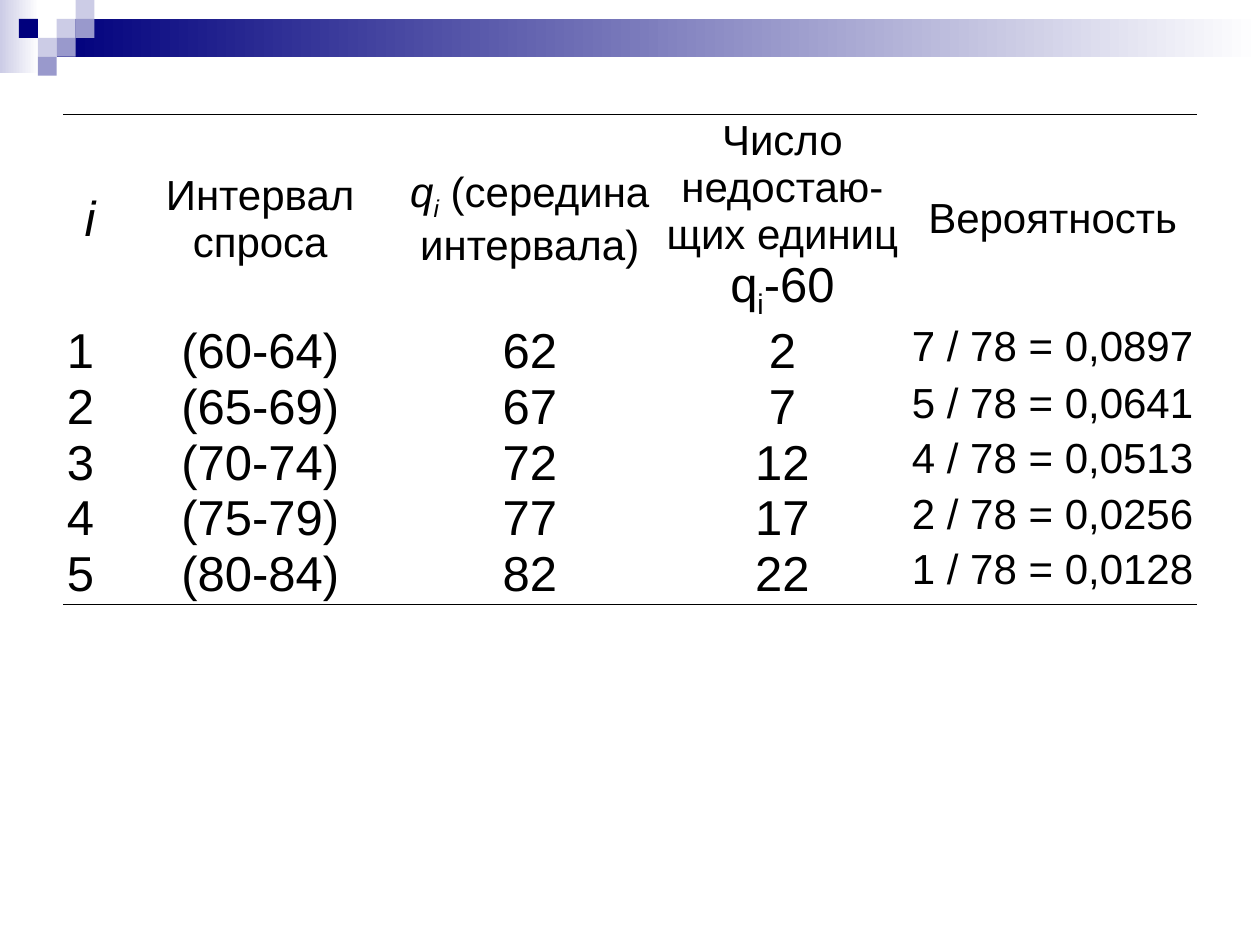
import lxml.etree
import pptx
import pptx.dml.color
import pptx.enum.shapes
import pptx.enum.text
import pptx.oxml.ns
import pptx.util

PX = 9144
COLORS = {
    "text": "000000",
    "navy": "00007D",
    "violet": "9999CC",
    "lilac": "CCCCE6",
    "white": "FFFFFF",
}
FONT = "Arial"
LARGE, SMALL = 28, 24
PLAIN_STYLE = "{2D5ABB26-0587-4C30-8999-92F81FD0307C}"
COLUMN_WIDTHS = [43, 227, 201, 200, 229]
COLUMN_MARGINS = [3, 3, 3, 3, 2]
ROW_HEIGHTS = [166, 45, 44, 44, 44, 46]

HEADERS = [
    [("i", LARGE, "italic")],
    [("Интервал спроса", SMALL, "")],
    [("q", SMALL, "italic"), ("i", SMALL, "italic sub"),
     (" (середина интервала)", SMALL, "")],
    [("Число недостаю-щих единиц ", SMALL, ""), ("q", LARGE, ""),
     ("i", LARGE, "sub"), ("-60", LARGE, "")],
    [("Вероятность", SMALL, "")],
]
DEMAND = [
    ("1", "(60-64)", "62", "2", "7 / 78 = 0,0897"),
    ("2", "(65-69)", "67", "7", "5 / 78 = 0,0641"),
    ("3", "(70-74)", "72", "12", "4 / 78 = 0,0513"),
    ("4", "(75-79)", "77", "17", "2 / 78 = 0,0256"),
    ("5", "(80-84)", "82", "22", "1 / 78 = 0,0128"),
]


def color(name):
    return pptx.dml.color.RGBColor.from_string(COLORS[name])


def add_block(page, box, *names):
    block = page.shapes.add_shape(
        pptx.enum.shapes.MSO_SHAPE.RECTANGLE, *(length * PX for length in box))
    block.shadow.inherit = False
    block.line.fill.background()
    if len(names) == 1:
        block.fill.solid()
        block.fill.fore_color.rgb = color(names[0])
        return
    block.fill.gradient()
    block.fill.gradient_angle = 0
    for stop, name, position in zip(block.fill.gradient_stops, names, (0, 1)):
        stop.color.rgb = color(name)
        stop.position = position


def add_banner(page, box):
    left, top, width, height = box
    step = height // 4
    add_block(page, (left, top, 31, 58), "lilac", "white")
    add_block(page, (left + 3 * step, top + step, width - 3 * step, 2 * step),
              "navy", "white")
    squares = [(3, 1, "lilac"), (4, 0, "lilac"), (4, 1, "violet"),
               (2, 2, "lilac"), (1, 1, "navy"), (3, 2, "violet"),
               (2, 3, "violet")]
    for column, row, name in squares:
        add_block(page, (left + column * step, top + row * step, step, step), name)


def add_border(cell, side):
    properties = cell._tc.get_or_add_tcPr()
    line = lxml.etree.Element(pptx.oxml.ns.qn("a:" + side), w=str(pptx.util.Pt(1)))
    fill = lxml.etree.SubElement(line, pptx.oxml.ns.qn("a:solidFill"))
    lxml.etree.SubElement(fill, pptx.oxml.ns.qn("a:srgbClr"), val=COLORS["text"])
    properties.insert(0, line)


def fill_cell(cell, runs, margin, alignment, anchor):
    cell.margin_left = cell.margin_right = margin * PX
    cell.margin_top = cell.margin_bottom = 0
    cell.vertical_anchor = anchor
    cell.fill.background()
    para = cell.text_frame.paragraphs[0]
    para.alignment = alignment
    for text, size, style in runs:
        span = para.add_run()
        span.text = text
        span.font.name = FONT
        span.font.size = pptx.util.Pt(size)
        span.font.color.rgb = color("text")
        span.font.italic = "italic" in style
        if "sub" in style:
            span.font._element.set("baseline", "-25000")


def add_demand_table(page, box):
    rows = [HEADERS]
    for values in DEMAND:
        sizes = [LARGE] * (len(values) - 1) + [SMALL]
        rows.append([[(value, size, "")] for value, size in zip(values, sizes)])
    table = page.shapes.add_table(
        len(rows), len(HEADERS), *(length * PX for length in box)).table
    table.first_row = table.horz_banding = False
    table._tbl.tblPr.find(pptx.oxml.ns.qn("a:tableStyleId")).text = PLAIN_STYLE
    for column, width in zip(table.columns, COLUMN_WIDTHS):
        column.width = width * PX
    for row, height in zip(table.rows, ROW_HEIGHTS):
        row.height = height * PX

    align = pptx.enum.text.PP_ALIGN
    anchors = pptx.enum.text.MSO_ANCHOR
    for row_index, row in enumerate(rows):
        is_header = row_index == 0
        for column_index, runs in enumerate(row):
            cell = table.cell(row_index, column_index)
            is_number = column_index == 0 and not is_header
            fill_cell(cell, runs, COLUMN_MARGINS[column_index],
                      align.LEFT if is_number else align.CENTER,
                      anchors.MIDDLE if is_header else anchors.TOP)
            if is_header:
                add_border(cell, "lnT")
            if row_index == len(rows) - 1:
                add_border(cell, "lnB")


def main():
    deck = pptx.Presentation()
    deck.slide_width = 1000 * PX
    deck.slide_height = 750 * PX
    page = deck.slides.add_slide(deck.slide_layouts[6])
    page.background.fill.solid()
    page.background.fill.fore_color.rgb = color("white")
    add_banner(page, (0, 0, 1000, 60))
    add_demand_table(page, (50, 91, sum(COLUMN_WIDTHS), sum(ROW_HEIGHTS)))
    deck.save("out.pptx")


if __name__ == "__main__":
    main()
